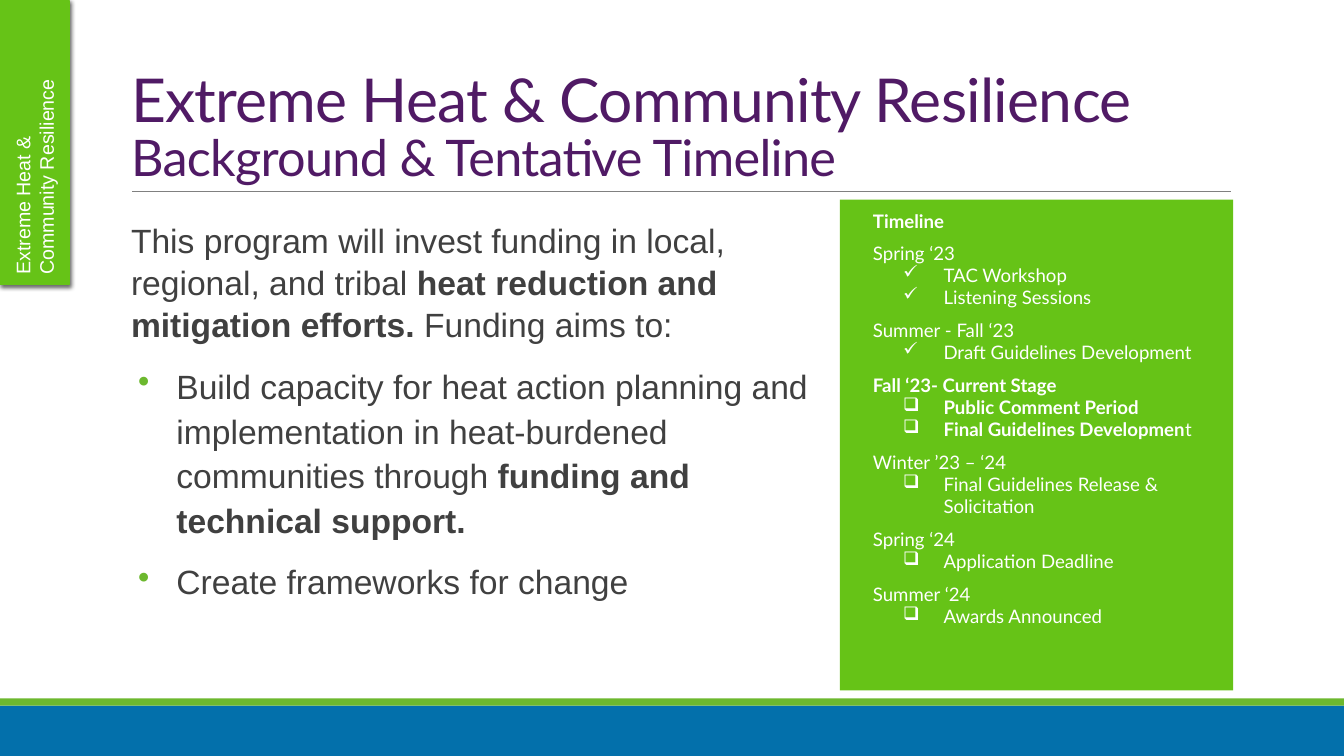
import pptx
import pptx.util
import pptx.dml.color
import pptx.enum.shapes
import pptx.enum.text
import pptx.oxml
from lxml import etree

Inches, Pt = pptx.util.Inches, pptx.util.Pt
RGBColor = pptx.dml.color.RGBColor
Anchor = pptx.enum.text.MSO_ANCHOR
Align = pptx.enum.text.PP_ALIGN
RECT = pptx.enum.shapes.MSO_SHAPE.RECTANGLE

BLUE = RGBColor(0x03, 0x70, 0xAB)
LEAF = RGBColor(0x6C, 0xB8, 0x2E)
LIME = RGBColor(0x66, 0xC3, 0x17)
PLUM = RGBColor(0x50, 0x1A, 0x65)
DARK = RGBColor(0x40, 0x40, 0x40)
GRAY = RGBColor(0x80, 0x80, 0x80)
WHITE = RGBColor(0xFF, 0xFF, 0xFF)
NS = "http://schemas.openxmlformats.org/drawingml/2006/main"

TITLE = [("Extreme Heat & Community Resilience", 43.2),
         ("Background & Tentative Timeline", 36)]
TAB = ["Extreme Heat &", "Community Resilience"]
INTRO = [("This program will invest funding in local, regional, and tribal ", False),
         ("heat reduction and mitigation efforts. ", True),
         ("Funding aims to:", False)]
AIMS = [
    [("Build capacity for heat action planning and implementation in "
      "heat-burdened communities through ", False),
     ("funding and technical support.", True)],
    [("Create frameworks for change", False)],
]
STAGES = [
    ("Spring ‘23", False, "✓", [[("TAC Workshop", False)],
                                [("Listening Sessions", False)]]),
    ("Summer - Fall ‘23", False, "✓", [[("Draft Guidelines Development", False)]]),
    ("Fall ‘23- Current Stage", True, "❑",
     [[("Public Comment Period", True)],
      [("Final Guidelines Developmen", True), ("t", False)]]),
    ("Winter ’23 – ‘24", False, "❑",
     [[("Final Guidelines Release & Solicitation", False)]]),
    ("Spring ‘24", False, "❑", [[("Application Deadline", False)]]),
    ("Summer ‘24", False, "❑", [[("Awards Announced", False)]]),
]


def add_box(slide, place, fill):
    """Add a flat filled rectangle."""
    box = slide.shapes.add_shape(RECT, *map(Inches, place))
    box.shadow.inherit = False
    box.fill.solid()
    box.fill.fore_color.rgb = fill
    box.line.fill.background()
    return box


def add_frame(slide, place):
    """Add a wrapping text box and return its frame."""
    frame = slide.shapes.add_textbox(*map(Inches, place)).text_frame
    frame.word_wrap = True
    return frame


def add_run(para, text, size, face, color, bold=False):
    """Add one styled run."""
    run = para.add_run()
    run.text = text
    font = run.font
    font.size, font.name, font.bold = Pt(size), face, bold
    font.color.rgb = color
    return run


def add_para(frame, runs, style, line=1.0, before=0, after=0,
             left=0, hang=0, mark=None, tint=None):
    """Add a paragraph with spacing, indent and an optional bullet."""
    para = frame.paragraphs[0]
    if para.runs:
        para = frame.add_paragraph()
    para.alignment = Align.LEFT
    para.line_spacing = line
    para.space_before, para.space_after = Pt(before), Pt(after)
    props = para._p.get_or_add_pPr()
    props.set("marL", str(Inches(left)))
    props.set("indent", str(-Inches(hang)))
    if mark:
        color = etree.SubElement(props, f"{{{NS}}}buClr")
        etree.SubElement(color, f"{{{NS}}}srgbClr", val=str(tint))
        etree.SubElement(props, f"{{{NS}}}buChar", char=mark)
    for text, bold in runs:
        add_run(para, text, *style, bold)


def add_title(slide):
    """Format the title and fill its two lines."""
    title = slide.shapes.title
    title.left, title.top = Inches(1.2), Inches(0.31)
    title.width, title.height = Inches(11), Inches(1.59)
    frame = title.text_frame
    frame.auto_size = pptx.enum.text.MSO_AUTO_SIZE.NONE
    frame.vertical_anchor = Anchor.BOTTOM
    para = frame.paragraphs[0]
    para.alignment = Align.LEFT
    para.line_spacing = 0.85
    for row, (text, size) in enumerate(TITLE):
        if row:
            para.add_line_break()
        run = add_run(para, text, size, "Lato", PLUM)
        run._r.get_or_add_rPr().set("spc", "-50")


def add_rule(slide):
    """Draw the thin line below the title."""
    ends = map(Inches, (1.31, 1.9, 12.21, 1.9))
    rule = slide.shapes.add_connector(pptx.enum.shapes.MSO_CONNECTOR.STRAIGHT, *ends)
    rule.line.color.rgb = GRAY
    rule.line.width = Pt(0.5)
    etree.SubElement(rule._element.spPr, f"{{{NS}}}effectLst")


def add_body(slide):
    """Write the intro and the aims."""
    frame = add_frame(slide, (1.2, 2.11, 6.9, 4.4))
    frame.margin_left = frame.margin_right = 0
    style = (24, "Arial", DARK)
    add_para(frame, INTRO, style, line=1.05, after=12, left=0.1)
    for aim in AIMS:
        add_para(frame, aim, style, line=1.11, after=12,
                 left=0.55, hang=0.38, mark="•", tint=LEAF)


def add_stages(slide):
    """Write the timeline on its panel."""
    add_box(slide, (8.33, 1.98, 3.9, 4.87), LIME)
    frame = add_frame(slide, (8.56, 2.09, 3.6, 4.77))
    style = (13.3, "Lato", WHITE)
    add_para(frame, [("Timeline", True)], style, line=0.7, after=6)
    for row, (name, bold, mark, tasks) in enumerate(STAGES):
        add_para(frame, [(name, bold)], style, line=0.7, before=12 if row else 6)
        for task in tasks:
            add_para(frame, task, style, left=0.7, hang=0.4, mark=mark, tint=WHITE)


def add_tab(slide):
    """Draw the turned side tab with its shadow."""
    tab = add_box(slide, (-1.07, 1.07, 2.82, 0.69), LIME)
    tab.rotation = 270
    tab.line.color.rgb = LIME
    tab.line.width = Pt(1)
    glow = pptx.oxml.parse_xml(
        f'<a:outerShdw xmlns:a="{NS}" blurRad="{Pt(3)}" dist="{Pt(2)}" dir="2700000" '
        'algn="tl" rotWithShape="0"><a:srgbClr val="000000">'
        '<a:alpha val="60000"/></a:srgbClr></a:outerShdw>')
    tab._element.spPr.find(f"{{{NS}}}effectLst").append(glow)
    tab.text_frame.vertical_anchor = Anchor.MIDDLE
    for text in TAB:
        add_para(tab.text_frame, [(text, False)], (14, "Arial", WHITE))


def main():
    """Build and save the slide."""
    deck = pptx.Presentation()
    deck.slide_width, deck.slide_height = Inches(13.33), Inches(7.5)
    slide = deck.slides.add_slide(deck.slide_layouts[5])
    add_box(slide, (0, 7, 13.33, 0.5), BLUE)
    add_box(slide, (0, 6.93, 13.33, 0.07), LEAF)
    add_rule(slide)
    add_title(slide)
    add_body(slide)
    add_stages(slide)
    add_tab(slide)
    deck.save("out.pptx")


if __name__ == "__main__":
    main()
